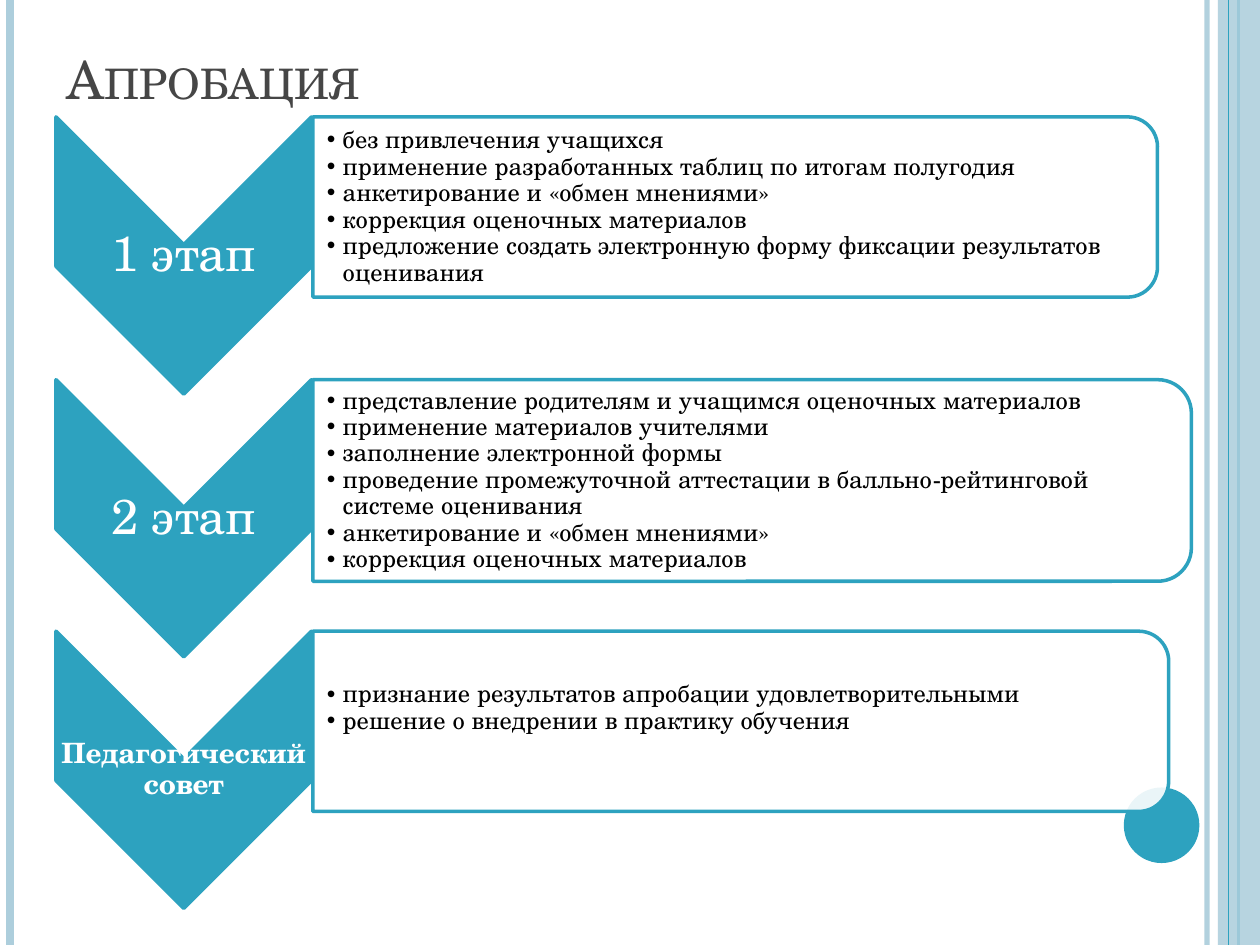
from dataclasses import dataclass

import lxml.etree
import pptx
import pptx.dml.color
import pptx.enum.shapes
import pptx.enum.text
import pptx.oxml.ns
import pptx.util

Pt = pptx.util.Pt
SHAPE = pptx.enum.shapes.MSO_SHAPE
ANCHOR = pptx.enum.text.MSO_ANCHOR
ALIGN = pptx.enum.text.PP_ALIGN
FONT = "TeX Gyre Schola"
COLORS = {
    "accent": "2DA2BF",
    "pale": "ADCEDC",
    "title": "464646",
    "white": "FFFFFF",
    "black": "000000",
}
SLIDE_WIDTH, SLIDE_HEIGHT = 720, 540
CHEVRON_LEFT, CHEVRON_WIDTH, CHEVRON_HEIGHT = 32, 146, 158.4
PANEL_LEFT = 178.8
LABEL_DROP, LABEL_HEIGHT = 73, 12.5
LIST_MARGIN = 5


@dataclass
class Stripe:
    x: float
    color: str
    weight: float
    opacity: int = 100


@dataclass
class Stage:
    name: str
    name_size: float
    name_bold: bool
    top: float
    panel_width: float
    panel_height: float
    steps: list[str]
    bottom_inset: float = 1


STRIPES = [
    Stripe(689.8, "pale", 3, 93),
    Stripe(5.8, "pale", 4.5),
    Stripe(707.8, "accent", 1.5),
]
INNER_STRIPE = Stripe(702, "accent", 0.75)

STAGES = [
    Stage("1 этап", 28, False, 66.8, 482.6, 103, [
        "без привлечения учащихся",
        "применение разработанных таблиц по итогам полугодия",
        "анкетирование и «обмен мнениями»",
        "коррекция оценочных материалов",
        "предложение создать электронную форму фиксации результатов оценивания",
    ]),
    Stage("2 этап", 28, False, 217, 502, 115.2, [
        "представление родителям и учащимся оценочных материалов",
        "применение материалов учителями",
        "заполнение электронной формы",
        "проведение промежуточной аттестации в балльно-рейтинговой системе оценивания",
        "анкетирование и «обмен мнениями»",
        "коррекция оценочных материалов",
    ]),
    Stage("Педагогический совет", 16, True, 360.7, 489, 103, [
        "признание результатов апробации удовлетворительными",
        "решение о внедрении в практику обучения",
    ], 16),
]


def rgb(color: str) -> pptx.dml.color.RGBColor:
    return pptx.dml.color.RGBColor.from_string(COLORS[color])


def add_child(parent, tag: str, **attributes: str):
    return lxml.etree.SubElement(parent, pptx.oxml.ns.qn(tag), attributes)


def paint(fill_format, color: str, holder, opacity: int = 100) -> None:
    fill_format.solid()
    fill_format.fore_color.rgb = rgb(color)
    if opacity < 100:
        tint = holder.find(".//" + pptx.oxml.ns.qn("a:srgbClr"))
        add_child(tint, "a:alpha", val=str(opacity * 1000))


def add_stripe(slide, stripe: Stripe) -> None:
    line = slide.shapes.add_connector(
        pptx.enum.shapes.MSO_CONNECTOR.STRAIGHT,
        Pt(stripe.x), 0, Pt(stripe.x), Pt(SLIDE_HEIGHT))
    line.line.width = Pt(stripe.weight)
    properties = line._element.spPr
    paint(line.line.fill, stripe.color, properties, stripe.opacity)
    add_child(properties, "a:effectLst")


def add_block(slide, kind, left: float, top: float, width: float, height: float,
              fill: str, opacity: int = 100, outlined: bool = False,
              turned: bool = False) -> None:
    if turned:
        left, top = left + (width - height) / 2, top + (height - width) / 2
        width, height = height, width
    block = slide.shapes.add_shape(kind, Pt(left), Pt(top), Pt(width), Pt(height))
    block.rotation = 90 if turned else 0
    block.shadow.inherit = False
    paint(block.fill, fill, block._element.spPr, opacity)
    if outlined:
        block.line.width = Pt(2)
        block.line.fill.solid()
        block.line.color.rgb = rgb("accent")
    else:
        block.line.fill.background()


def set_frame(frame, anchor, insets: tuple[float, float, float, float]) -> None:
    frame.word_wrap = True
    frame.auto_size = pptx.enum.text.MSO_AUTO_SIZE.NONE
    frame.vertical_anchor = anchor
    (frame.margin_left, frame.margin_top,
     frame.margin_right, frame.margin_bottom) = map(Pt, insets)


def add_run(paragraph, wording: str, size: float, color: str, bold: bool = False):
    run = paragraph.add_run()
    run.text = wording
    run.font.name = FONT
    run.font.size = Pt(size)
    run.font.bold = bold
    run.font.color.rgb = rgb(color)
    return run


def place(placeholder, left: float, top: float, width: float, height: float) -> None:
    placeholder.left, placeholder.top = Pt(left), Pt(top)
    placeholder.width, placeholder.height = Pt(width), Pt(height)


def fill_title(title) -> None:
    place(title, 31, 9.4, 588, 57)
    set_frame(title.text_frame, ANCHOR.BOTTOM, (7.2, 3.6, 7.2, 3.6))
    heading = title.text_frame.paragraphs[0]
    heading.alignment = ALIGN.LEFT
    run = add_run(heading, "Апробация", 30, "title")
    run.font._element.set("cap", "small")


def fill_list(slide, body, stage: Stage) -> None:
    slide.shapes._spTree.append(body._element)
    place(body, PANEL_LEFT, stage.top + LIST_MARGIN,
          stage.panel_width - LIST_MARGIN, stage.panel_height - 2 * LIST_MARGIN)
    frame = body.text_frame
    set_frame(frame, ANCHOR.MIDDLE, (8, 1, 1, stage.bottom_inset))
    for number, step in enumerate(stage.steps):
        item = frame.add_paragraph() if number else frame.paragraphs[0]
        item.alignment = ALIGN.LEFT
        item.line_spacing = 0.9
        item.space_before = item.space_after = Pt(0)
        properties = item._p.get_or_add_pPr()
        properties.set("marL", str(Pt(9)))
        properties.set("indent", str(-Pt(9)))
        add_child(properties, "a:buChar", char="•")
        add_run(item, step, 14, "black")


def add_stage(slide, body, stage: Stage) -> None:
    add_block(slide, SHAPE.CHEVRON, CHEVRON_LEFT, stage.top, CHEVRON_WIDTH,
              CHEVRON_HEIGHT, "accent", outlined=True, turned=True)
    label = slide.shapes.add_textbox(
        Pt(CHEVRON_LEFT), Pt(stage.top + LABEL_DROP), Pt(CHEVRON_WIDTH), Pt(LABEL_HEIGHT))
    set_frame(label.text_frame, ANCHOR.MIDDLE, (1, 1, 1, 1))
    caption = label.text_frame.paragraphs[0]
    caption.alignment = ALIGN.CENTER
    caption.line_spacing = 0.9
    add_run(caption, stage.name, stage.name_size, "white", stage.name_bold)
    add_block(slide, SHAPE.ROUND_2_SAME_RECTANGLE, PANEL_LEFT, stage.top,
              stage.panel_width, stage.panel_height, "white", 90,
              outlined=True, turned=True)
    fill_list(slide, body, stage)


def main() -> None:
    deck = pptx.Presentation()
    deck.slide_width, deck.slide_height = Pt(SLIDE_WIDTH), Pt(SLIDE_HEIGHT)
    slide = deck.slides.add_slide(deck.slide_layouts.get_by_name("Comparison"))
    title, *bodies = slide.placeholders
    for spare in bodies[len(STAGES):]:
        spare._element.getparent().remove(spare._element)

    for stripe in STRIPES:
        add_stripe(slide, stripe)
    add_block(slide, SHAPE.RECTANGLE, 696, 0, 24, SLIDE_HEIGHT, "pale", 87)
    add_stripe(slide, INNER_STRIPE)
    add_block(slide, SHAPE.OVAL, 642.2, 450, 43.2, 43.2, "accent")

    fill_title(title)
    for body, stage in zip(bodies, STAGES):
        add_stage(slide, body, stage)
    deck.save("out.pptx")


if __name__ == "__main__":
    main()
